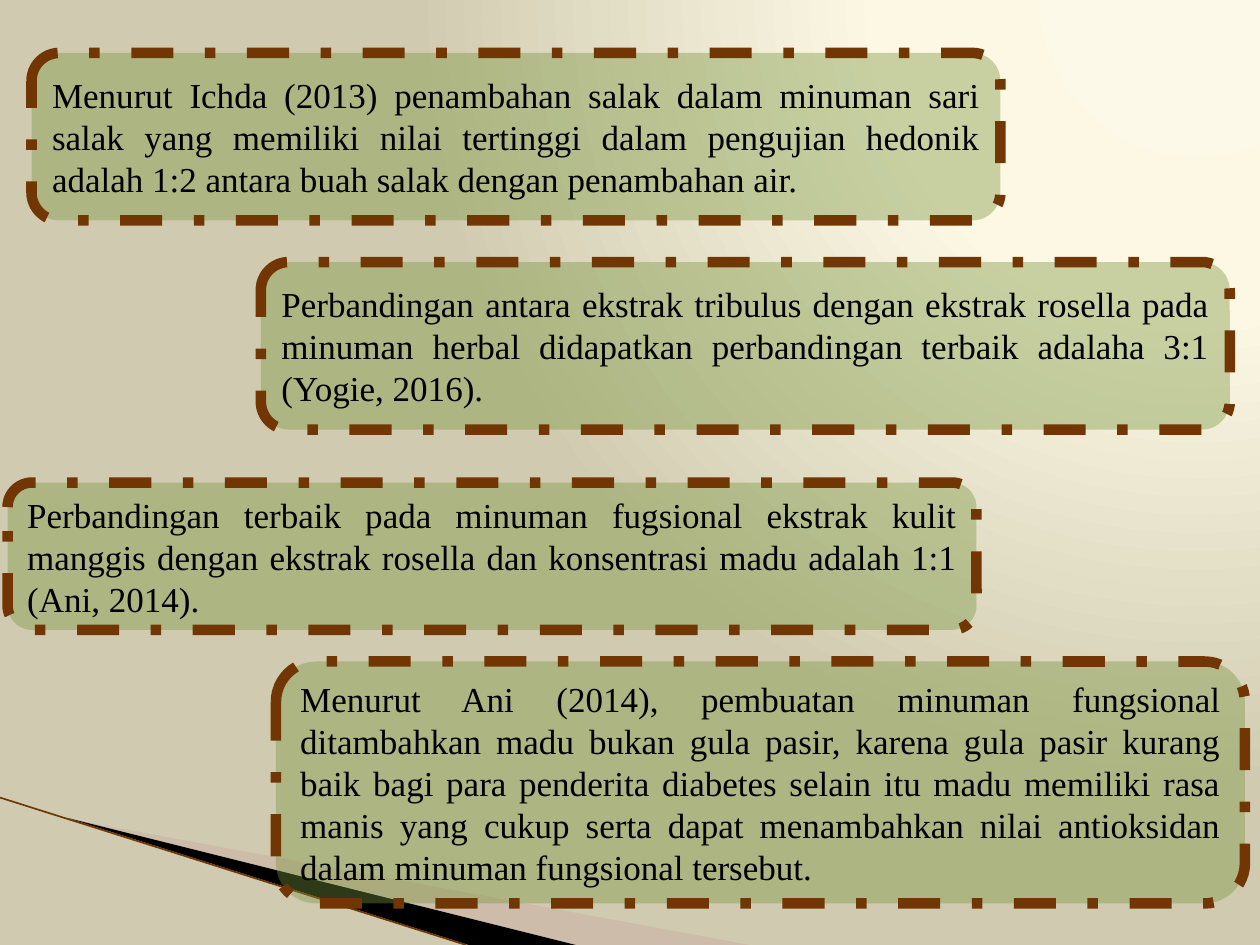
import pptx
import pptx.dml.color
import pptx.enum.dml
import pptx.enum.shapes
import pptx.enum.text
import pptx.oxml
import pptx.oxml.ns
import pptx.util
from pptx.util import Inches

COLORS = {
    "glow": "FDF9E8",
    "cream": "FCF8E4",
    "sand": "D0CBB0",
    "rose": "C6A79F",
    "black": "000000",
    "olive": "77933C",
    "brown": "713604",
}
FONT = "Times New Roman"


class SlideBuilder:
    def __init__(self, slide):
        self.slide = slide

    def color(self, name):
        return pptx.dml.color.RGBColor.from_string(COLORS[name])

    def background(self, stops, focus):
        stop_xml = "".join(
            f'<a:gs pos="{position * 1000}"><a:srgbClr val="{COLORS[name]}"/></a:gs>'
            for position, name in stops
        )
        sides = " ".join(f'{side}="{value * 1000}"' for side, value in zip("ltrb", focus))
        background = pptx.oxml.parse_xml(
            f'<p:bg {pptx.oxml.ns.nsdecls("p", "a")}><p:bgPr><a:gradFill>'
            f'<a:gsLst>{stop_xml}</a:gsLst>'
            f'<a:path path="circle"><a:fillToRect {sides}/></a:path>'
            '</a:gradFill><a:effectLst/></p:bgPr></p:bg>'
        )
        self.slide.element.cSld.insert(0, background)

    def fill(self, shape, name, opacity=100):
        shape.shadow.inherit = False
        shape.fill.solid()
        shape.fill.fore_color.rgb = self.color(name)
        if opacity < 100:
            color_element = shape.element.spPr.find(".//" + pptx.oxml.ns.qn("a:srgbClr"))
            alpha = pptx.oxml.parse_xml(
                f'<a:alpha {pptx.oxml.ns.nsdecls("a")} val="{opacity * 1000}"/>'
            )
            color_element.append(alpha)

    def wedge(self, points, name, opacity=100):
        corners = [(Inches(x), Inches(y)) for x, y in points]
        builder = self.slide.shapes.build_freeform(*corners[0])
        builder.add_line_segments(corners[1:], close=True)
        shape = builder.convert_to_shape()
        self.fill(shape, name, opacity)
        shape.line.fill.background()

    def line(self, start, end, name, width):
        connector = self.slide.shapes.add_connector(
            pptx.enum.shapes.MSO_CONNECTOR.STRAIGHT,
            *(Inches(value) for value in start + end),
        )
        connector.line.color.rgb = self.color(name)
        connector.line.width = pptx.util.Pt(width)
        connector.element.spPr.append(pptx.oxml.parse_xml(
            f'<a:effectLst {pptx.oxml.ns.nsdecls("a")}/>'
        ))

    def quote_box(self, left, top, height, text):
        box = self.slide.shapes.add_shape(
            pptx.enum.shapes.MSO_SHAPE.ROUNDED_RECTANGLE,
            Inches(left), Inches(top), Inches(7.69), Inches(height),
        )
        self.fill(box, "olive", 39)
        box.line.color.rgb = self.color("brown")
        box.line.width = pptx.util.Pt(6)
        box.line.dash_style = pptx.enum.dml.MSO_LINE.DASH_DOT
        frame = box.text_frame
        frame.word_wrap = True
        frame.vertical_anchor = pptx.enum.text.MSO_ANCHOR.MIDDLE
        frame.text = text
        para = frame.paragraphs[0]
        para.alignment = pptx.enum.text.PP_ALIGN.JUSTIFY
        for span in para.runs:
            span.font.name = FONT
            span.font.size = pptx.util.Pt(20)
            span.font.color.rgb = self.color("black")


QUOTES = [
    (0.25, 0.42, 1.33, "Menurut Ichda (2013) penambahan salak dalam minuman sari salak yang "
     "memiliki nilai tertinggi dalam pengujian hedonik adalah 1:2 antara buah salak dengan "
     "penambahan air."),
    (2.07, 2.08, 1.33, "Perbandingan antara ekstrak tribulus dengan ekstrak rosella pada "
     "minuman herbal didapatkan perbandingan terbaik adalaha 3:1 (Yogie, 2016)."),
    (0.06, 3.83, 1.17, "Perbandingan terbaik pada minuman fugsional ekstrak kulit manggis "
     "dengan ekstrak rosella dan konsentrasi madu adalah 1:1 (Ani, 2014)."),
    (2.19, 5.25, 1.92, "Menurut Ani (2014), pembuatan minuman fungsional ditambahkan madu "
     "bukan gula pasir, karena gula pasir kurang baik bagi para penderita diabetes selain itu "
     "madu memiliki rasa manis yang cukup serta dapat menambahkan nilai antioksidan dalam "
     "minuman fungsional tersebut."),
]


def main():
    deck = pptx.Presentation()
    deck.slide_width = Inches(10)
    deck.slide_height = Inches(7.5)
    page = SlideBuilder(deck.slides.add_slide(deck.slide_layouts[6]))
    page.background([(0, "glow"), (40, "cream"), (100, "sand")], (95, -106, 5, 206))
    page.wedge([(0.55, 6.5), (5.95, 7.5), (4.56, 7.5)], "rose", 40)
    page.wedge([(0.53, 6.49), (4.57, 7.5), (3.72, 7.5)], "black")
    page.line((0, 6.33), (3.7, 7.5), "brown", 0.95)
    for quote in QUOTES:
        page.quote_box(*quote)
    deck.save("out.pptx")


if __name__ == "__main__":
    main()
